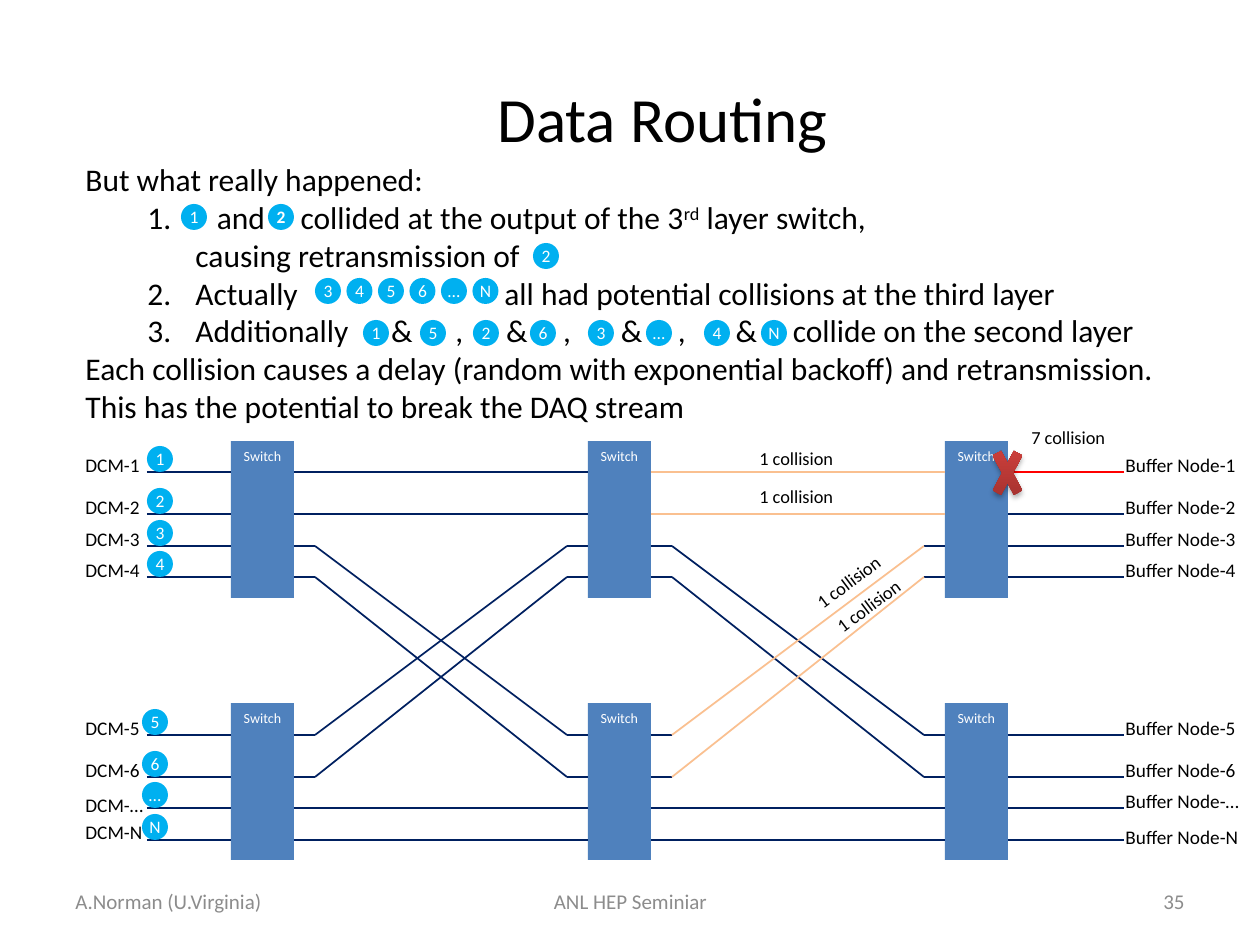
import pptx
import pptx.dml.color
import pptx.enum.shapes
import pptx.enum.text
import pptx.oxml
import pptx.oxml.ns
import pptx.util

SHAPE = pptx.enum.shapes.MSO_SHAPE
ALIGN = pptx.enum.text.PP_ALIGN
ANCHOR = pptx.enum.text.MSO_ANCHOR
FIT = pptx.enum.text.MSO_AUTO_SIZE

# Colours
BLACK, WHITE, GREY = "000000", "FFFFFF", "8C8C8C"
NAVY, ORANGE, RED = "002060", "FAC090", "FF0000"
SWITCH_BLUE, PACKET_BLUE = "4F81BD", "00B0F0"

# Network grid, in px
SWITCH_LEFTS = (231, 588, 945)
SWITCH_TOPS = (441, 703)
SWITCH_WIDTH, SWITCH_HEIGHT = 63, 157
PORTS = (472, 514, 546, 577, 735, 777, 808, 840)
STUB = 21
LANES = ("1", "2", "3", "4", "5", "6", "…", "N")
PACKET = 26
SPACE_WIDTH = 4.07  # points, one space at 18 pt


def px(value):
    return pptx.util.Emu(round(value * 914400 / 126))


def colour(hex_text):
    return pptx.dml.color.RGBColor.from_string(hex_text)


def apply(target, values):
    for name, value in values.items():
        setattr(target, name, value)


def style(font, size, hex_text, **more):
    apply(font, {"name": "Calibri", "size": pptx.util.Pt(size), **more})
    font.color.rgb = colour(hex_text)


def write(shape, text, size, hex_text, align=ALIGN.LEFT, bold=False, **frame):
    apply(shape.text_frame, frame)
    para = shape.text_frame.paragraphs[0]
    para.alignment = align
    span = para.add_run()
    span.text = text
    style(span.font, size, hex_text, bold=bold)


def add_text(shapes, area, text, size, hex_text=BLACK, align=ALIGN.LEFT):
    box = shapes.add_textbox(*map(px, area))
    write(box, text, size, hex_text, align,
          word_wrap=True, vertical_anchor=ANCHOR.MIDDLE)


def add_label(shapes, area, text, size, rotation=0):
    box = shapes.add_textbox(*map(px, area))
    box.rotation = rotation
    write(box, text, size, BLACK, word_wrap=False,
          auto_size=FIT.SHAPE_TO_FIT_TEXT)


def add_solid(shapes, kind, area, hex_text):
    shape = shapes.add_shape(kind, *map(px, area))
    shape.shadow.inherit = False
    shape.fill.solid()
    shape.fill.fore_color.rgb = colour(hex_text)
    shape.line.fill.background()
    return shape


def add_switch(shapes, left, top):
    area = (left, top, SWITCH_WIDTH, SWITCH_HEIGHT)
    switch = add_solid(shapes, SHAPE.RECTANGLE, area, SWITCH_BLUE)
    write(switch, "Switch", 8, WHITE, ALIGN.CENTER,
          word_wrap=True, vertical_anchor=ANCHOR.TOP)


def add_packet(shapes, left, top, name, bold=False):
    packet = add_solid(shapes, SHAPE.OVAL, (left, top, PACKET, PACKET), PACKET_BLUE)
    write(packet, name, 10, WHITE, ALIGN.CENTER, bold, word_wrap=False,
          vertical_anchor=ANCHOR.MIDDLE, margin_left=0, margin_right=0,
          margin_top=0, margin_bottom=0)


def add_line(shapes, x1, y1, x2, y2, hex_text=NAVY):
    line = shapes.add_connector(pptx.enum.shapes.MSO_CONNECTOR.STRAIGHT,
                                *map(px, (x1, y1, x2, y2)))
    line.line.color.rgb = colour(hex_text)
    line.line.width = pptx.util.Pt(1)
    line._element.spPr.append(pptx.oxml.parse_xml(
        f"<a:effectLst {pptx.oxml.ns.nsdecls('a')}/>"))


def add_stage(shapes, start, end, hot):
    """Wire one switch column to the next; hot holds the colliding lanes."""
    near, far = start + STUB, end - STUB
    for lane, y in enumerate(PORTS):
        if lane in (0, 1, 6, 7):
            add_line(shapes, start, y, end, y, ORANGE if lane in hot else NAVY)
        else:
            add_line(shapes, start, y, near, y)
            add_line(shapes, far, y, end, y)
    for lane, target in ((2, 4), (3, 5), (4, 2), (5, 3)):
        add_line(shapes, near, PORTS[lane], far, PORTS[target],
                 ORANGE if lane in hot else NAVY)


def add_network(shapes):
    for top in SWITCH_TOPS:
        for left in SWITCH_LEFTS:
            add_switch(shapes, left, top)
    first, second, third = SWITCH_LEFTS
    add_stage(shapes, first + SWITCH_WIDTH, second, ())
    add_stage(shapes, second + SWITCH_WIDTH, third, (0, 1, 4, 5))
    for lane, (name, y) in enumerate(zip(LANES, PORTS)):
        add_line(shapes, 147, y, first, y)
        add_line(shapes, third + SWITCH_WIDTH, y, 1124, y, NAVY if lane else RED)
        # The last labels stand slightly off their lanes
        source_top = y - 25 + {"…": 4, "N": -1}.get(name, 0)
        buffer_top = y - 25 + {"N": 4}.get(name, 0)
        add_label(shapes, (73, source_top, 88, 36), f"DCM-{name}", 11)
        add_label(shapes, (1113, buffer_top, 142, 36), f"Buffer Node-{name}", 11)


def add_body_paragraph(frame, parts, margin, hanging, numbered):
    """Parts are text, a gap counted in spaces, or a (text, baseline) pair."""
    first = not frame.paragraphs[0].runs
    para = frame.paragraphs[0] if first else frame.add_paragraph()
    props = para._p.get_or_add_pPr()
    props.set("marL", str(px(margin)))
    props.set("indent", str(px(-hanging)))
    if numbered:
        para.level = 1
        props.append(pptx.oxml.parse_xml(
            f"<a:buAutoNum {pptx.oxml.ns.nsdecls('a')} type='arabicPeriod'/>"))
    for part in parts:
        if part == "\n":
            para.add_line_break()
            continue
        span = para.add_run()
        style(span.font, 18, BLACK)
        if isinstance(part, int):
            span.text = " "
            span.font._element.set("spc", str(round((part - 1) * SPACE_WIDTH * 100)))
        elif isinstance(part, tuple):
            span.text = part[0]
            span.font._element.set("baseline", str(part[1] * 1000))
        else:
            span.text = part


def add_body(shapes):
    frame = shapes.add_textbox(*map(px, (73, 154, 1153, 318))).text_frame
    frame.word_wrap = True
    plain, hung, item = (0, 0, False), (48, 48, False), (110, 48, True)
    for parts, layout in (
        (["But what really happened:"], plain),
        ([3, "and", 5, "collided at the output of the 3", ("rd", 30),
          " layer switch,", "\n", "causing retransmission of"], item),
        (["Actually", 29, "all had potential collisions at the third layer"], item),
        (["Additionally", 6, "&", 6, ",", 6, "&", 5, ",", 7, "&", 5, ",", 7, "&", 5,
          "collide on the second layer"], item),
        (["Each collision causes a delay (random with exponential backoff)"
          " and retransmission."], hung),
        (["This has the potential to break the DAQ stream"], hung),
    ):
        add_body_paragraph(frame, parts, *layout)


def add_cross(shapes):
    cross = add_solid(shapes, SHAPE.MATH_MULTIPLY, (987, 435, 41, 76), RED)
    cross.fill.gradient()
    cross.fill.gradient_angle = 90
    for stop, (place, hex_text) in zip(cross.fill.gradient_stops,
                                       ((0, "9C2F2D"), (0.8, "CB3E3A"))):
        stop.position = place
        stop.color.rgb = colour(hex_text)
    effects = cross._element.spPr.find(pptx.oxml.ns.qn("a:effectLst"))
    effects.append(pptx.oxml.parse_xml(
        f"<a:outerShdw {pptx.oxml.ns.nsdecls('a')} blurRad='40000' dist='23000'"
        " dir='5400000' rotWithShape='0'><a:srgbClr val='000000'>"
        "<a:alpha val='35000'/></a:srgbClr></a:outerShdw>"))


def main():
    deck = pptx.Presentation()
    deck.slide_width, deck.slide_height = px(1260), px(945)
    page = deck.slides.add_slide(deck.slide_layouts[6])
    shapes = page.shapes

    # Title and footer
    add_text(shapes, (195, 38, 935, 158), "Data Routing", 36, align=ALIGN.CENTER)
    for left, width, text, align in (
        (63, 294, "A.Norman (U.Virginia)", ALIGN.LEFT),
        (431, 399, "ANL HEP Seminiar", ALIGN.CENTER),
        (903, 294, "35", ALIGN.RIGHT),
    ):
        add_text(shapes, (left, 876, width, 50), text, 12, GREY, align)

    # Switch network with the packets waiting at its inputs
    add_network(shapes.add_group_shape().shapes)
    for lane, (name, y) in enumerate(zip(LANES, PORTS)):
        add_packet(shapes, 147 if lane < 4 else 142, y - PACKET, name)

    # Collision counts
    for left, top, count, rotation in ((747, 441, 1, 0), (747, 479, 1, 0),
                                       (799, 563, 1, 323.2), (819, 587, 1, 323.2),
                                       (1019, 420, 7, 0)):
        add_label(shapes, (left, top, 103, 36), f"{count} collision", 10.5, rotation)

    # Explanation, with packets set into its gaps
    add_body(shapes)
    add_packet(shapes, 181, 204, "1")
    add_packet(shapes, 268, 204, "2", bold=True)
    add_packet(shapes, 533, 243, "2")
    for column, name in enumerate(LANES[2:]):
        add_packet(shapes, 315 + 31.5 * column, 278, name)
    for left, name in zip((363, 420, 473, 530, 588, 646, 704, 761), "15263…4N"):
        add_packet(shapes, left, 320, name)

    add_cross(shapes)
    deck.save("out.pptx")


if __name__ == "__main__":
    main()
